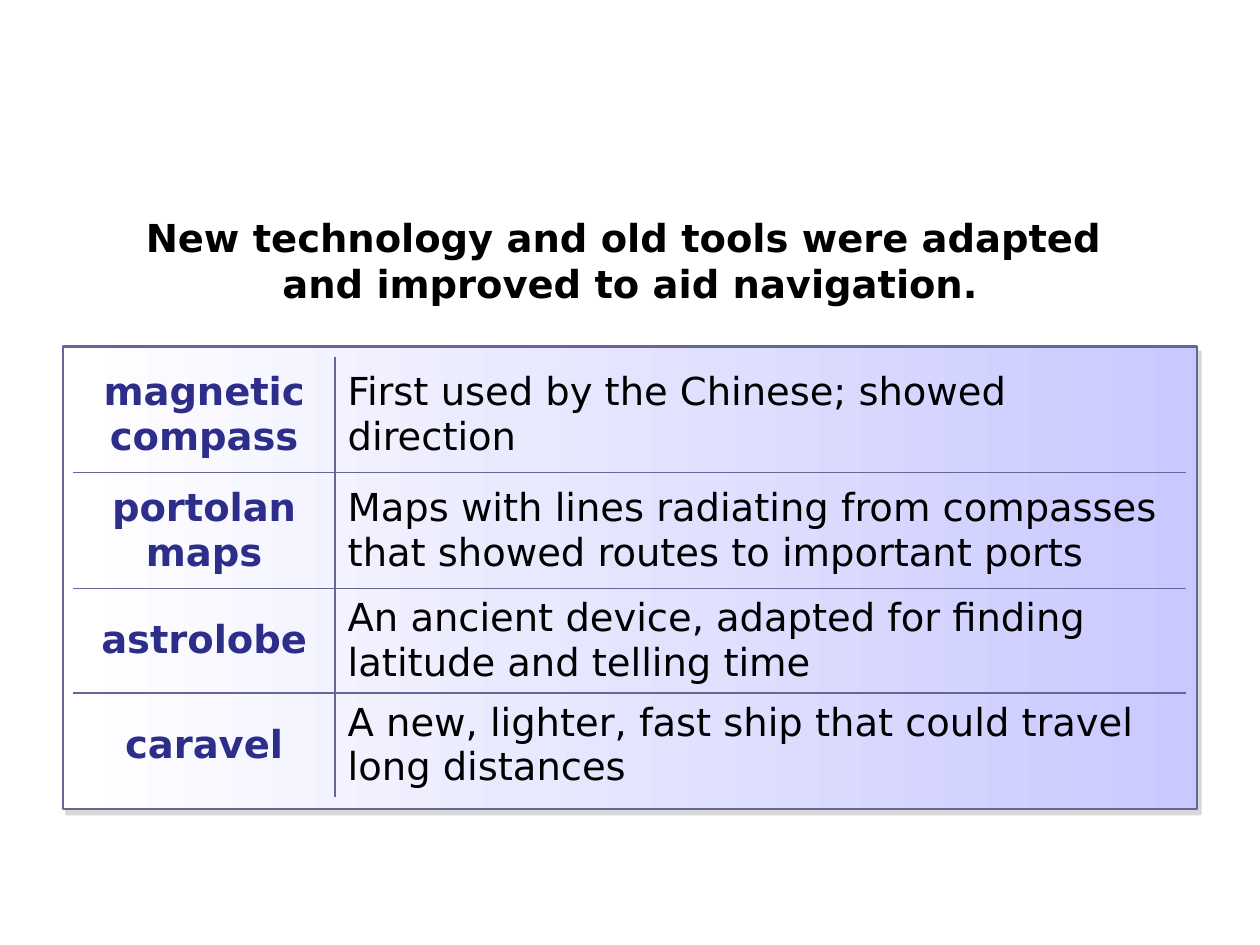
from lxml import etree
from pptx import Presentation
from pptx.dml.color import RGBColor
from pptx.enum.shapes import MSO_SHAPE
from pptx.enum.text import MSO_ANCHOR, MSO_AUTO_SIZE, PP_ALIGN
from pptx.oxml import parse_xml
from pptx.oxml.ns import qn
from pptx.util import Inches, Pt

RECTANGLE = MSO_SHAPE.RECTANGLE
TOP, MIDDLE = MSO_ANCHOR.TOP, MSO_ANCHOR.MIDDLE
LEFT, CENTER = PP_ALIGN.LEFT, PP_ALIGN.CENTER
NO_AUTOFIT = MSO_AUTO_SIZE.NONE

FONT, SIZE = "DejaVu Sans", 22
BLACK, NAVY, RULE = "000000", "2D2D8A", "666699"
GRADIENT = ["FFFFFF", "C9C9FF"]
PLAIN_TABLE = "{2D5ABB26-0587-4C30-8999-92F81FD0307C}"
SHADOW = (
    '<a:effectLst xmlns:a="http://schemas.openxmlformats.org/drawingml/2006/main">'
    '<a:outerShdw blurRad="0" dist="45720" dir="3360000" algn="tl" rotWithShape="0">'
    '<a:srgbClr val="B2B2B2"><a:alpha val="50000"/></a:srgbClr>'
    '</a:outerShdw></a:effectLst>'
)

TITLE = "New technology and old tools were adapted \vand improved to aid navigation."
TOOLS = [
    ("magnetic compass", "First used by the Chinese; showed direction"),
    ("portolan maps", "Maps with lines radiating from compasses that showed routes to important ports"),
    ("astrolobe", "An ancient device, adapted for finding latitude and telling time"),
    ("caravel", "A new, lighter, fast ship that could travel long distances"),
]
COL_WIDTHS = [2.08, 6.75]
ROW_HEIGHTS = [0.92, 0.92, 0.83, 0.83]


def rgb(value):
    """Turn a hex string into a colour."""
    return RGBColor.from_string(value)


def format_paragraph(p, color, bold, align):
    """Set the font and alignment of a paragraph."""
    p.alignment = align
    p.font.name, p.font.size, p.font.bold = FONT, Pt(SIZE), bold
    p.font.color.rgb = rgb(color)


def add_title(s):
    """Place the heading in the title placeholder."""
    title = s.shapes.title
    title.left, title.top = Inches(0.5), Inches(1.65)
    title.width, title.height = Inches(9), Inches(0.67)
    tf = title.text_frame
    tf.text = TITLE
    tf.word_wrap, tf.auto_size, tf.vertical_anchor = True, NO_AUTOFIT, TOP
    p = tf.paragraphs[0]
    format_paragraph(p, BLACK, True, CENTER)
    p.space_after = Pt(15.9)


def add_panel(s):
    """Draw the shaded panel behind the table."""
    panel = s.shapes.add_shape(RECTANGLE, Inches(0.5), Inches(2.75), Inches(9), Inches(3.67))
    panel.fill.gradient()
    panel.fill.gradient_angle = 0
    for stop, color in zip(panel.fill.gradient_stops, GRADIENT):
        stop.color.rgb = rgb(color)
    panel.line.color.rgb = rgb(RULE)
    panel.line.width = Pt(1.5)
    panel._element.spPr.append(parse_xml(SHADOW))


def set_borders(cell, sides):
    """Rule the given sides of a cell and leave the others open."""
    tc_pr = cell._tc.get_or_add_tcPr()
    for i, side in enumerate("LRTB"):
        ln = etree.Element(qn(f"a:ln{side}"), w=str(Pt(1)))
        if side in sides:
            fill = etree.SubElement(ln, qn("a:solidFill"))
            etree.SubElement(fill, qn("a:srgbClr"), val=RULE)
        else:
            etree.SubElement(ln, qn("a:noFill"))
        tc_pr.insert(i, ln)


def add_tools_table(s):
    """Add the table of tools with inner rules only."""
    table = s.shapes.add_table(
        len(TOOLS), len(COL_WIDTHS), Inches(0.58), Inches(2.83),
        Inches(sum(COL_WIDTHS)), Inches(sum(ROW_HEIGHTS))).table
    table.first_row = table.horz_banding = False
    table._tbl.tblPr.find(qn("a:tableStyleId")).text = PLAIN_TABLE
    for column, width in zip(table.columns, COL_WIDTHS):
        column.width = Inches(width)
    for r, texts in enumerate(TOOLS):
        table.rows[r].height = Inches(ROW_HEIGHTS[r])
        for c, text in enumerate(texts):
            cell = table.cell(r, c)
            cell.text = text
            cell.vertical_anchor = MIDDLE
            cell.fill.background()
            p = cell.text_frame.paragraphs[0]
            if c == 0:
                format_paragraph(p, NAVY, True, CENTER)
            else:
                format_paragraph(p, BLACK, False, LEFT)
            p.space_before = Pt(SIZE * 0.2)
            sides = "R" if c == 0 else "L"
            sides += "T" if r > 0 else ""
            sides += "B" if r < len(TOOLS) - 1 else ""
            set_borders(cell, sides)


def main():
    """Build and save the slide."""
    prs = Presentation()
    prs.slide_width, prs.slide_height = Inches(10), Inches(7.5)
    s = prs.slides.add_slide(prs.slide_layouts[5])
    add_panel(s)
    add_tools_table(s)
    add_title(s)
    prs.save("out.pptx")


if __name__ == "__main__":
    main()
